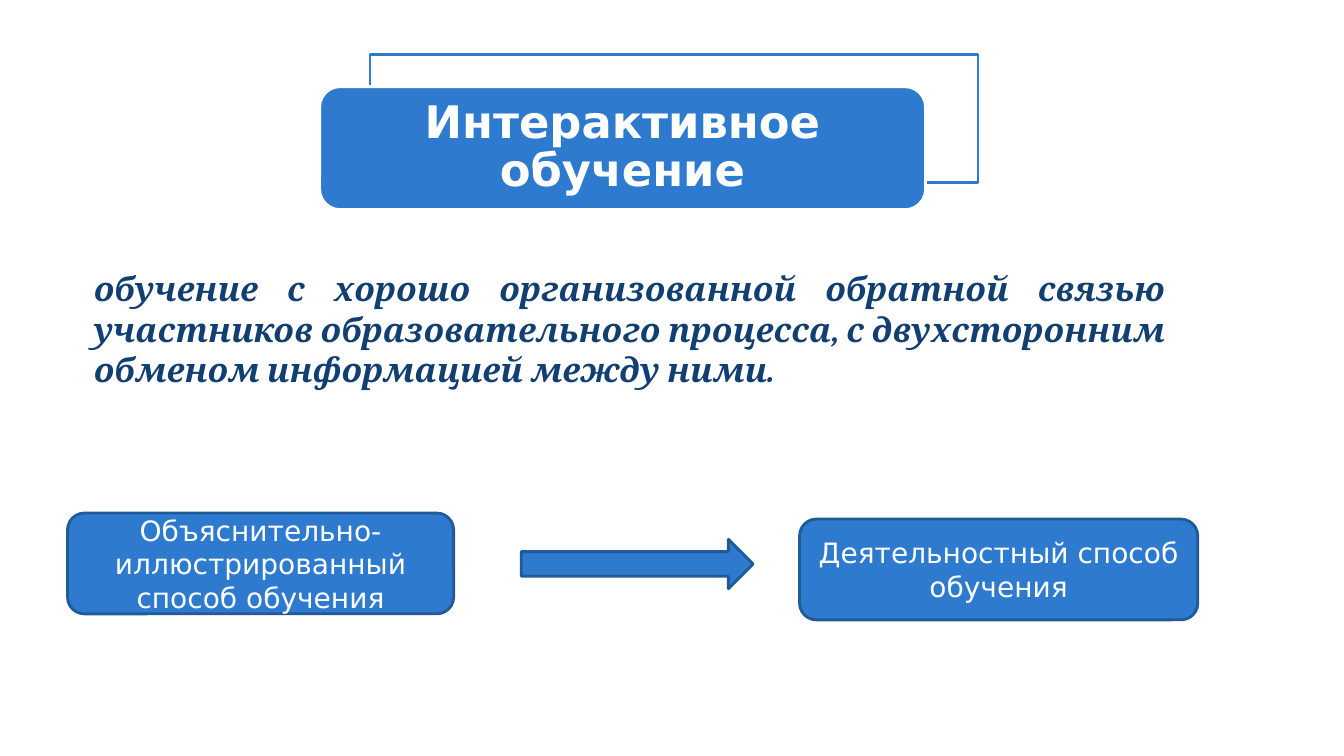
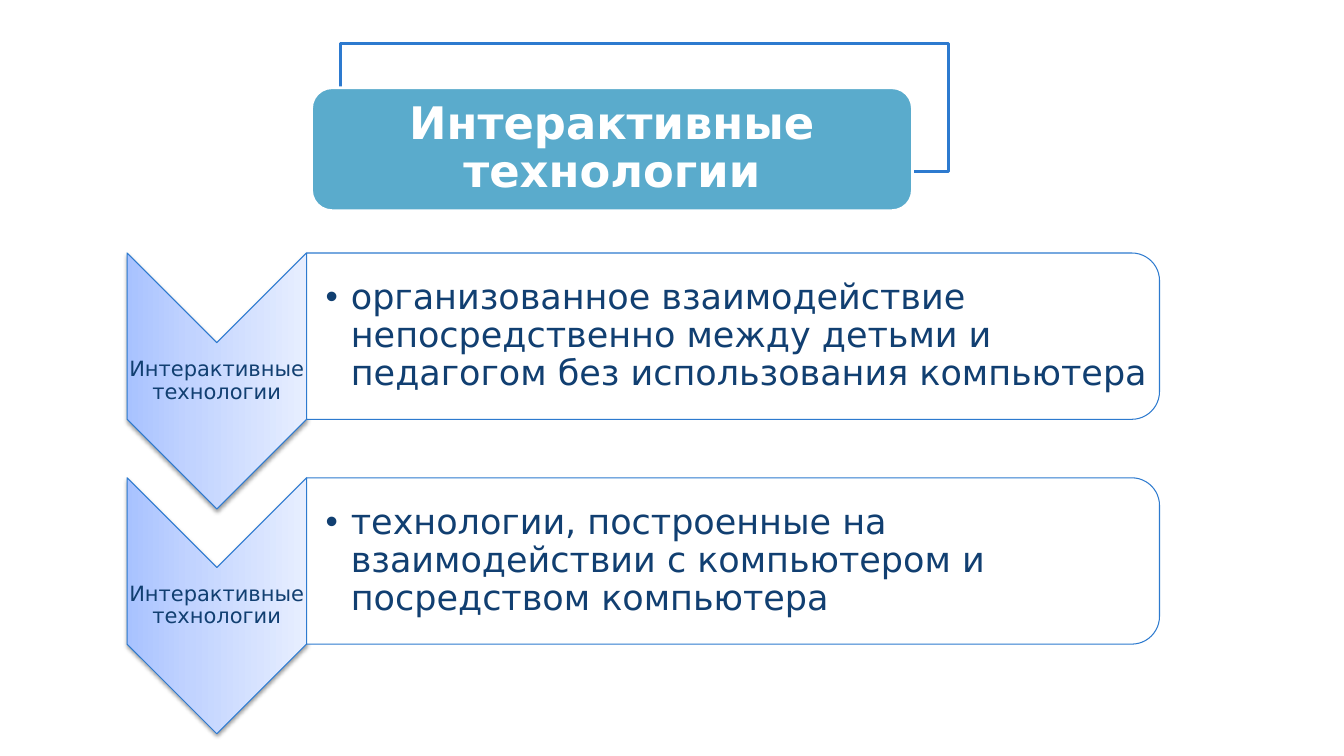
"""Build two slides on interactive learning and interactive technologies."""
from lxml import etree
from pptx import Presentation, util as u
from pptx.dml.color import RGBColor
from pptx.enum import shapes, text
from pptx.oxml import parse_xml

WHITE, BLUE, TEAL, EDGE, NAVY = "FFFFFF", "2D7ACF", "5AABCC", "215A99", "113F71"
SANS, SERIF = "DejaVu Sans", "Cambria"
GRADIENT = [(0, "A8C2FF"), (35, "C1D3FF"), (100, "E7EEFF")]
NS = 'xmlns:a="http://schemas.openxmlformats.org/drawingml/2006/main"'
KIND = shapes.MSO_SHAPE
ALIGN = text.PP_ALIGN
ANCHOR = text.MSO_ANCHOR
TITLE_ONLY_BODY, TWO_BODIES = 1, 3

LEARNING = {
    "title": "Интерактивное обучение",
    "definition": "обучение с хорошо организованной обратной связью участников "
                  "образовательного процесса, с двухсторонним обменом информацией между ними.",
    "methods": [
        ("Объяснительно-иллюстрированный способ обучения", (0.67, 5.09, 3.83, 1)),
        ("Деятельностный способ обучения", (7.93, 5.15, 3.95, 1)),
    ],
}
TECHNOLOGIES = {
    "title": "Интерактивные технологии",
    "label": "Интерактивные технологии",
    "kinds": [
        "организованное взаимодействие непосредственно между детьми и педагогом "
        "без использования компьютера",
        "технологии, построенные на взаимодействии с компьютером и посредством компьютера",
    ],
}
ROW_TOP, ROW_STEP = 2.51, 2.23
CHEVRON_LEFT, CHEVRON_WIDTH, CHEVRON_HEIGHT = 1.26, 1.78, 2.54
PANEL_LEFT, PANEL_WIDTH, PANEL_HEIGHT = 3.04, 8.46, 1.65


def color(hex_code):
    return RGBColor.from_string(hex_code)


def place(shape, box):
    shape.left, shape.top, shape.width, shape.height = map(u.Inches, box)


def draw(slide, kind, box, fill, line, weight, turned=False):
    if turned:
        left, top, width, height = box
        box = (left + (width - height) / 2, top + (height - width) / 2, height, width)
    shape = slide.shapes.add_shape(kind, *map(u.Inches, box))
    shape.rotation = 90 if turned else 0
    shape.shadow.inherit = False
    shape.fill.solid()
    shape.fill.fore_color.rgb = color(fill)
    shape.line.color.rgb = color(line)
    shape.line.width = u.Pt(weight)
    return shape


def write(shape, words, size, ink=NAVY, font=SANS, align=ALIGN.CENTER, anchor=ANCHOR.MIDDLE,
          bold=False, italic=False, spacing=1.0, insets=(0.1, 0.05, 0.1, 0.05), bullet=None):
    frame = shape.text_frame
    frame.word_wrap = True
    frame.auto_size = text.MSO_AUTO_SIZE.NONE
    frame.vertical_anchor = anchor
    (frame.margin_left, frame.margin_top,
     frame.margin_right, frame.margin_bottom) = map(u.Inches, insets)
    paragraph = frame.paragraphs[0]
    paragraph.text = words
    paragraph.alignment = align
    paragraph.line_spacing = spacing
    paragraph.space_before = u.Pt(0)
    props = paragraph._p.get_or_add_pPr()
    indent = u.Inches(0.25) if bullet else 0
    props.set("marL", str(indent))
    props.set("indent", str(-indent))
    mark = f'<a:buChar {NS} char="{bullet}"/>' if bullet else f"<a:buNone {NS}/>"
    props.append(parse_xml(mark))
    run = paragraph.runs[0].font
    run.name, run.size, run.bold, run.italic = font, u.Pt(size), bold, italic
    run.color.rgb = color(ink)


def shade(chevron):
    """Give a chevron its vertical gradient and soft shadow."""
    stops = "".join(f'<a:gs pos="{pos * 1000}"><a:srgbClr val="{code}"/></a:gs>'
                    for pos, code in GRADIENT)
    props = chevron._element.spPr
    solid = props.find("{*}solidFill")
    props.replace(solid, parse_xml(
        f'<a:gradFill {NS} rotWithShape="1"><a:gsLst>{stops}</a:gsLst>'
        '<a:lin ang="16200000" scaled="1"/></a:gradFill>'))
    shadow = parse_xml(
        f'<a:outerShdw {NS} blurRad="{u.Pt(3.1)}" dist="{u.Pt(1.6)}" dir="5400000" '
        'rotWithShape="0"><a:srgbClr val="000000"><a:alpha val="38000"/></a:srgbClr>'
        '</a:outerShdw>')
    props.find("{*}effectLst").append(shadow)


def add_slide(deck, layout, title, frame_at, plate, fill):
    """Add a slide with a title plate in front of an outlined frame."""
    slide = deck.slides.add_slide(deck.slide_layouts[layout])
    draw(slide, KIND.RECTANGLE, (*frame_at, 6.03, 1.27), WHITE, BLUE, 2)
    draw(slide, KIND.ROUNDED_RECTANGLE, plate, fill, WHITE, 2)
    heading = slide.shapes.title
    slide.shapes._spTree.append(heading._element)
    left, top, width, height = plate
    place(heading, (left + 0.06, top + 0.06, width - 0.12, height - 0.12))
    write(heading, title, 32, WHITE, bold=True, spacing=0.9, insets=(0.23, 0, 0.23, 0))
    return slide


def learning_slide(deck):
    slide = add_slide(deck, TITLE_ONLY_BODY, LEARNING["title"], (3.67, 0.54),
                      (3.17, 0.86, 6.01, 1.22), BLUE)
    definition = slide.placeholders[1]
    place(definition, (0.83, 2.61, 10.83, 1.31))
    write(definition, LEARNING["definition"], 24, font=SERIF, align=ALIGN.JUSTIFY,
          anchor=ANCHOR.TOP, bold=True, italic=True)
    for words, box in LEARNING["methods"]:
        method = draw(slide, KIND.ROUNDED_RECTANGLE, box, BLUE, EDGE, 2)
        write(method, words, 20, WHITE)
    draw(slide, KIND.RIGHT_ARROW, (5.17, 5.35, 2.3, 0.49), BLUE, EDGE, 2)


def technologies_slide(deck):
    slide = add_slide(deck, TWO_BODIES, TECHNOLOGIES["title"], (3.38, 0.43),
                      (3.09, 0.87, 5.96, 1.22), TEAL)
    for row, words in enumerate(TECHNOLOGIES["kinds"]):
        top = ROW_TOP + row * ROW_STEP
        chevron = draw(slide, KIND.CHEVRON, (CHEVRON_LEFT, top, CHEVRON_WIDTH, CHEVRON_HEIGHT),
                       WHITE, BLUE, 0.75, turned=True)
        shade(chevron)
        label = slide.shapes.add_textbox(*map(u.Inches, (
            CHEVRON_LEFT, top + CHEVRON_WIDTH / 2, CHEVRON_WIDTH, 0.76)))
        write(label, TECHNOLOGIES["label"], 15, spacing=0.9, insets=(0.01,) * 4)
        draw(slide, KIND.ROUND_2_SAME_RECTANGLE, (PANEL_LEFT, top, PANEL_WIDTH, PANEL_HEIGHT),
             WHITE, BLUE, 0.75, turned=True)
        meaning = slide.placeholders[row + 1]
        slide.shapes._spTree.append(meaning._element)
        place(meaning, (PANEL_LEFT, top + 0.08, PANEL_WIDTH - 0.08, PANEL_HEIGHT - 0.16))
        write(meaning, words, 25, align=ALIGN.LEFT, spacing=0.9,
              insets=(0.19, 0.02, 0.02, 0.02), bullet="•")


def main():
    deck = Presentation()
    deck.slide_width, deck.slide_height = u.Inches(13.33), u.Inches(7.5)
    learning_slide(deck)
    technologies_slide(deck)
    deck.save("out.pptx")


if __name__ == "__main__":
    main()
